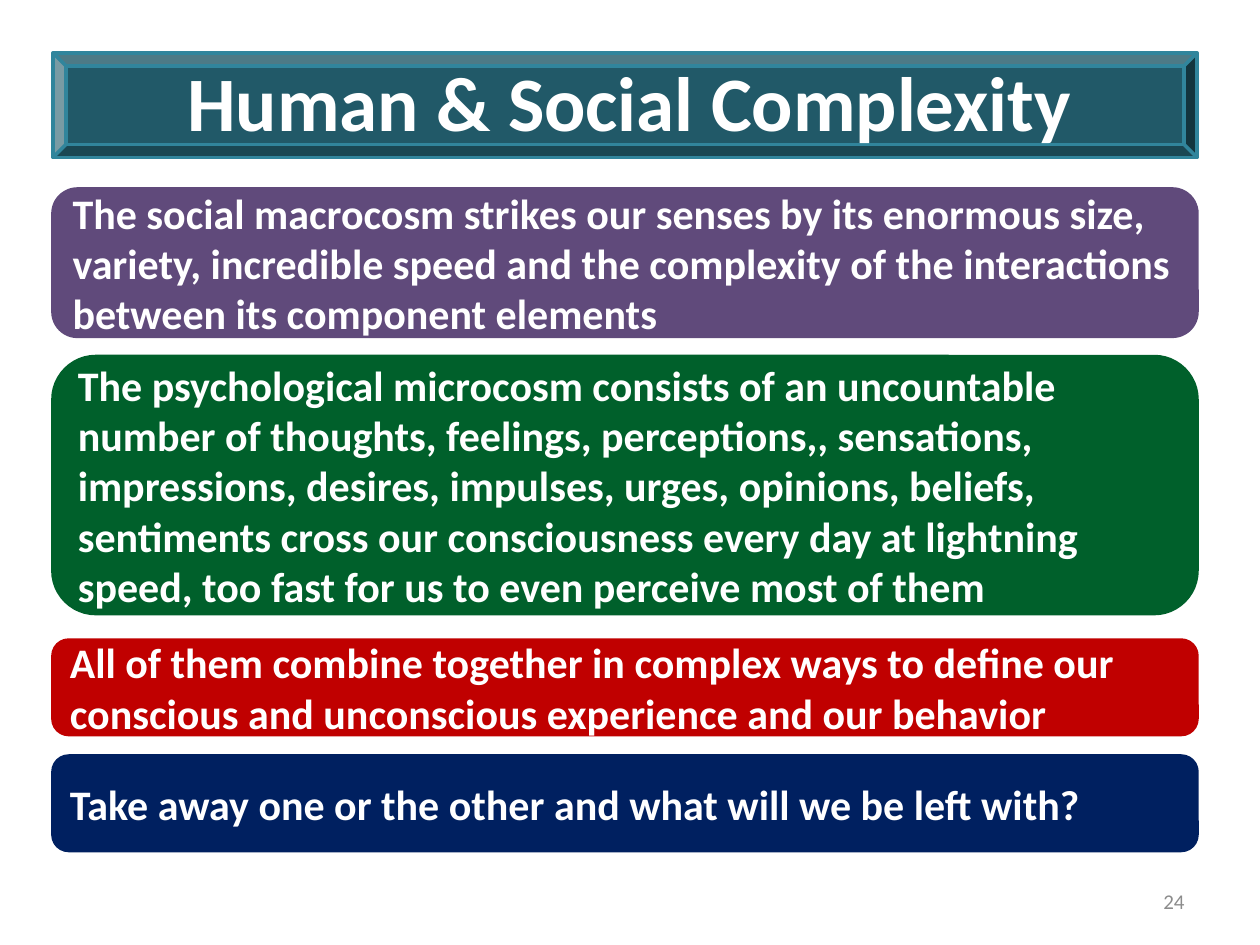
"""Builds the Human & Social Complexity slide."""
from pptx import Presentation
from pptx.dml.color import RGBColor
from pptx.enum.shapes import MSO_SHAPE
from pptx.enum.text import MSO_ANCHOR, PP_ALIGN
from pptx.util import Inches, Pt


def color(code):
    return RGBColor.from_string(code)


def write(frame, text, size=24, ink="FFFFFF", bold=True, align=PP_ALIGN.LEFT):
    frame.word_wrap = True
    frame.vertical_anchor = MSO_ANCHOR.MIDDLE
    line = frame.paragraphs[0]
    line.alignment = align
    run = line.add_run()
    run.text = text
    font = run.font
    font.name, font.size, font.bold = "Calibri", Pt(size), bold
    font.color.rgb = color(ink)


class Deck:
    left, width = 0.42, 9.08

    def __init__(self):
        self.file = Presentation()
        self.file.slide_width, self.file.slide_height = Inches(10), Inches(7.5)
        self.slide = self.file.slides.add_slide(self.file.slide_layouts[6])

    def panel(self, kind, top, height, fill, edge):
        box = (self.left, top, self.width, height)
        shape = self.slide.shapes.add_shape(kind, *map(Inches, box))
        shape.shadow.inherit = False
        shape.fill.solid()
        shape.fill.fore_color.rgb = color(fill)
        shape.line.color.rgb = color(edge)
        shape.line.width = Pt(2)
        return shape

    def card(self, top, height, fill, text):
        kind = MSO_SHAPE.FLOWCHART_ALTERNATE_PROCESS
        write(self.panel(kind, top, height, fill, fill).text_frame, text)

    def label(self, box, text, **style):
        area = self.slide.shapes.add_textbox(*map(Inches, box))
        write(area.text_frame, text, **style)


CARDS = [
    (1.5, 1.17, "604A7B",
     "The social macrocosm strikes our senses by its enormous size, variety, "
     "incredible speed and the complexity of the interactions between its "
     "component elements"),
    (2.83, 2.04, "00602B",
     "The psychological microcosm consists of an uncountable number of "
     "thoughts, feelings, perceptions,, sensations, impressions, desires, "
     "impulses, urges, opinions, beliefs, sentiments cross our consciousness "
     "every day at lightning speed, too fast for us to even perceive most of "
     "them"),
    (5.08, 0.75, "C00000",
     "All of them combine together in complex ways to define our conscious "
     "and unconscious experience and our behavior"),
    (6, 0.75, "002060",
     "Take away one or the other and what will we be left with?"),
]


def main():
    deck = Deck()
    deck.panel(MSO_SHAPE.BEVEL, 0.42, 0.83, "215968", "31859C")
    deck.label((0.5, 0.17, 9, 1.25), "Human & Social Complexity",
               size=44, align=PP_ALIGN.CENTER)
    deck.label((7.17, 6.95, 2.33, 0.4), "24", size=12, ink="8C8C8C",
               bold=False, align=PP_ALIGN.RIGHT)
    for card in CARDS:
        deck.card(*card)
    deck.file.save("out.pptx")


if __name__ == "__main__":
    main()
